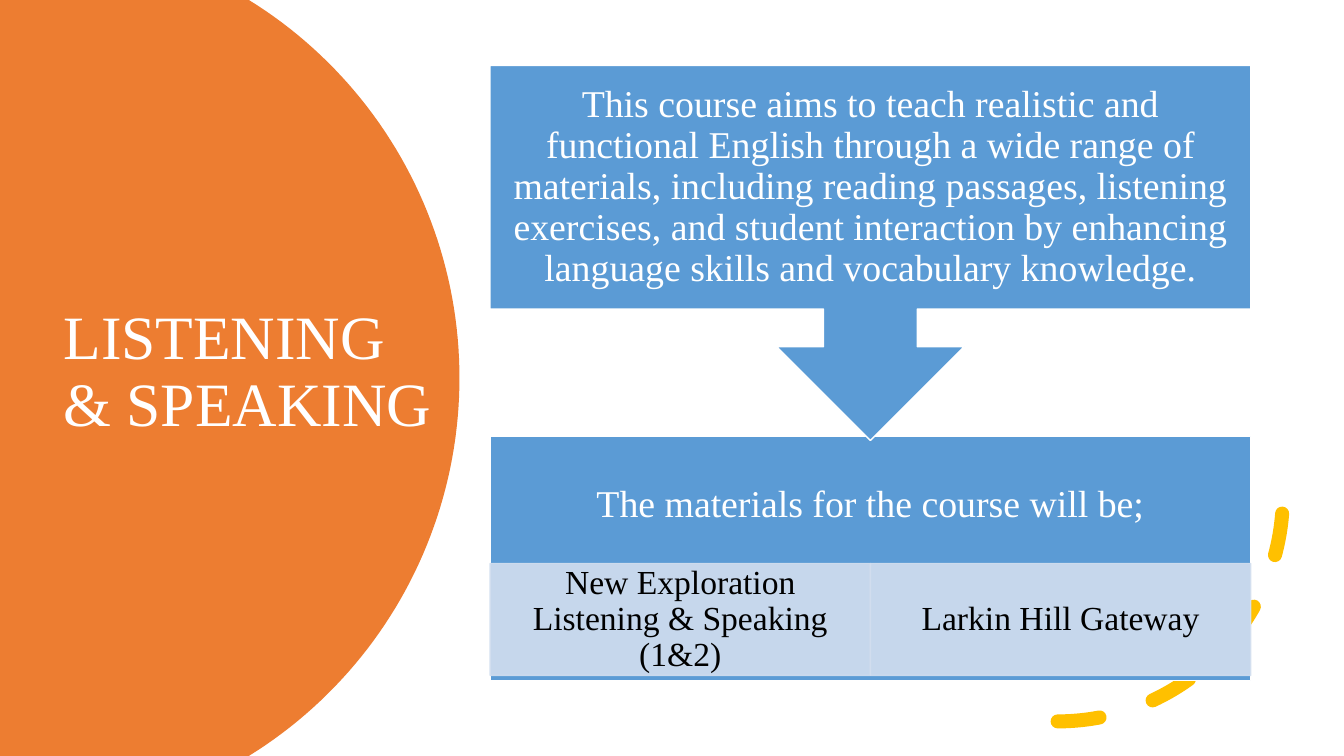
"""Build the Listening & Speaking course slide."""
from math import asin, cos, sin

from lxml import etree
from pptx import Presentation
from pptx.dml.color import RGBColor
from pptx.enum.dml import MSO_LINE
from pptx.enum.shapes import MSO_SHAPE
from pptx.enum.text import MSO_ANCHOR, MSO_AUTO_SIZE, PP_ALIGN
from pptx.oxml.ns import qn
from pptx.util import Cm, Pt

TITLE = "LISTENING & SPEAKING"
AIM = ("This course aims to teach realistic and functional English through "
       "a wide range of materials, including reading passages, listening "
       "exercises, and student interaction by enhancing language skills and "
       "vocabulary knowledge.")
MATERIALS_HEADING = "The materials for the course will be;"
MATERIALS = ["New Exploration Listening & Speaking (1&2)", "Larkin Hill Gateway"]

WHITE = RGBColor(0xFF, 0xFF, 0xFF)
BLACK = RGBColor(0, 0, 0)
ORANGE = RGBColor(0xED, 0x7D, 0x31)
BLUE = RGBColor(0x5B, 0x9B, 0xD5)
PALE = RGBColor(0xD2, 0xDE, 0xEF)
GOLD = RGBColor(0xFF, 0xC0, 0x00)
RECT, ARC = MSO_SHAPE.RECTANGLE, MSO_SHAPE.ARC
CALLOUT = MSO_SHAPE.DOWN_ARROW_CALLOUT
MIDDLE, NO_FIT = MSO_ANCHOR.MIDDLE, MSO_AUTO_SIZE.NONE
LEFT, CENTER = PP_ALIGN.LEFT, PP_ALIGN.CENTER
DASH = MSO_LINE.DASH

SLIDE_W, SLIDE_H = 33.87, 19.05
DISC_X, DISC_R, DISC_STEPS = 0.38, 11.2, 90
COLUMN_X, COLUMN_W = 12.35, 19.17
AIM_Y, AIM_H = 1.65, 9.45
MATERIALS_Y, MATERIALS_H = 11, 6.15
CELL_Y, CELL_H = 14.2, 2.82
PAD, CELL_PAD_X, CELL_PAD_Y = 0.53, 0.48, 0.08


def write(shape, text, size, color, align, margins):
    """Fill a shape with one formatted paragraph."""
    frame = shape.text_frame
    frame.text = text
    sides = ("margin_left", "margin_top", "margin_right", "margin_bottom")
    settings = {"word_wrap": True, "auto_size": NO_FIT, "vertical_anchor": MIDDLE,
                **dict(zip(sides, map(Cm, margins)))}
    for name, value in settings.items():
        setattr(frame, name, value)
    paragraph = frame.paragraphs[0]
    paragraph.alignment = align
    paragraph.line_spacing = 0.9
    font = paragraph.runs[0].font
    for name, value in {"size": Pt(size), "name": "Times New Roman"}.items():
        setattr(font, name, value)
    font.color.rgb = color


def add_block(slide, kind, box, fill, outline):
    """Add a filled and outlined preset shape."""
    block = slide.shapes.add_shape(kind, *map(Cm, box))
    block.shadow.inherit = False
    block.fill.solid()
    block.fill.fore_color.rgb = fill
    block.line.color.rgb = outline
    block.line.width = Pt(1)
    return block


def add_disc(slide):
    """Add the orange disc cut off by the slide edges."""
    reach = asin(SLIDE_H / 2 / DISC_R)
    angles = [reach * (2 * i / DISC_STEPS - 1) for i in range(DISC_STEPS + 1)]
    rim = [(Cm(DISC_X + DISC_R * cos(a)), Cm(SLIDE_H / 2 + DISC_R * sin(a)))
           for a in angles]
    builder = slide.shapes.build_freeform(0, 0)
    builder.add_line_segments(rim + [(0, Cm(SLIDE_H))], close=True)
    disc = builder.convert_to_shape()
    disc.shadow.inherit = False
    disc.fill.solid()
    disc.fill.fore_color.rgb = ORANGE
    disc.line.fill.background()


def add_title(slide):
    """Place the title in front of the disc."""
    title = slide.shapes.title
    for name, value in {"left": 1.35, "top": 3.2, "width": 9.88, "height": 12.4}.items():
        setattr(title, name, Cm(value))
    write(title, TITLE, 44, WHITE, LEFT, (0.25, 0.13, 0.25, 0.13))
    title._element.getparent().append(title._element)


def add_dashed_arc(slide):
    """Add the gold dashed quarter circle."""
    arc = slide.shapes.add_shape(ARC, Cm(20.98), Cm(6.83), Cm(11.35), Cm(11.35))
    arc.shadow.inherit = False
    arc.fill.background()
    arc.line.color.rgb = GOLD
    arc.line.width = Pt(10)
    arc.line.dash_style = DASH
    properties = arc._element.spPr
    properties.find(qn("a:xfrm")).set("flipV", "1")
    properties.find(qn("a:ln")).set("cap", "rnd")


def add_materials(slide):
    """Add the materials panel with one cell per material."""
    panel = add_block(slide, RECT, (COLUMN_X, MATERIALS_Y, COLUMN_W, MATERIALS_H),
                      BLUE, WHITE)
    below_heading = MATERIALS_Y + MATERIALS_H - CELL_Y
    write(panel, MATERIALS_HEADING, 27, WHITE, CENTER,
          (PAD, PAD, PAD, below_heading + PAD / 2))
    cell_w = COLUMN_W / len(MATERIALS)
    for i, material in enumerate(MATERIALS):
        cell = add_block(slide, RECT, (COLUMN_X + i * cell_w, CELL_Y, cell_w, CELL_H),
                         PALE, PALE)
        for color in cell._element.spPr.iter(qn("a:srgbClr")):
            etree.SubElement(color, qn("a:alpha")).set("val", "90000")
        write(cell, material, 24, BLACK, CENTER, (CELL_PAD_X, CELL_PAD_Y) * 2)


def main():
    """Build and save the slide."""
    deck = Presentation()
    deck.slide_width, deck.slide_height = Cm(SLIDE_W), Cm(SLIDE_H)
    slide = deck.slides.add_slide(deck.slide_layouts[5])
    add_disc(slide)
    add_title(slide)
    add_dashed_arc(slide)
    add_materials(slide)
    aim = add_block(slide, CALLOUT, (COLUMN_X, AIM_Y, COLUMN_W, AIM_H), BLUE, WHITE)
    write(aim, AIM, 27, WHITE, CENTER, (PAD,) * 4)
    deck.save("out.pptx")


if __name__ == "__main__":
    main()
